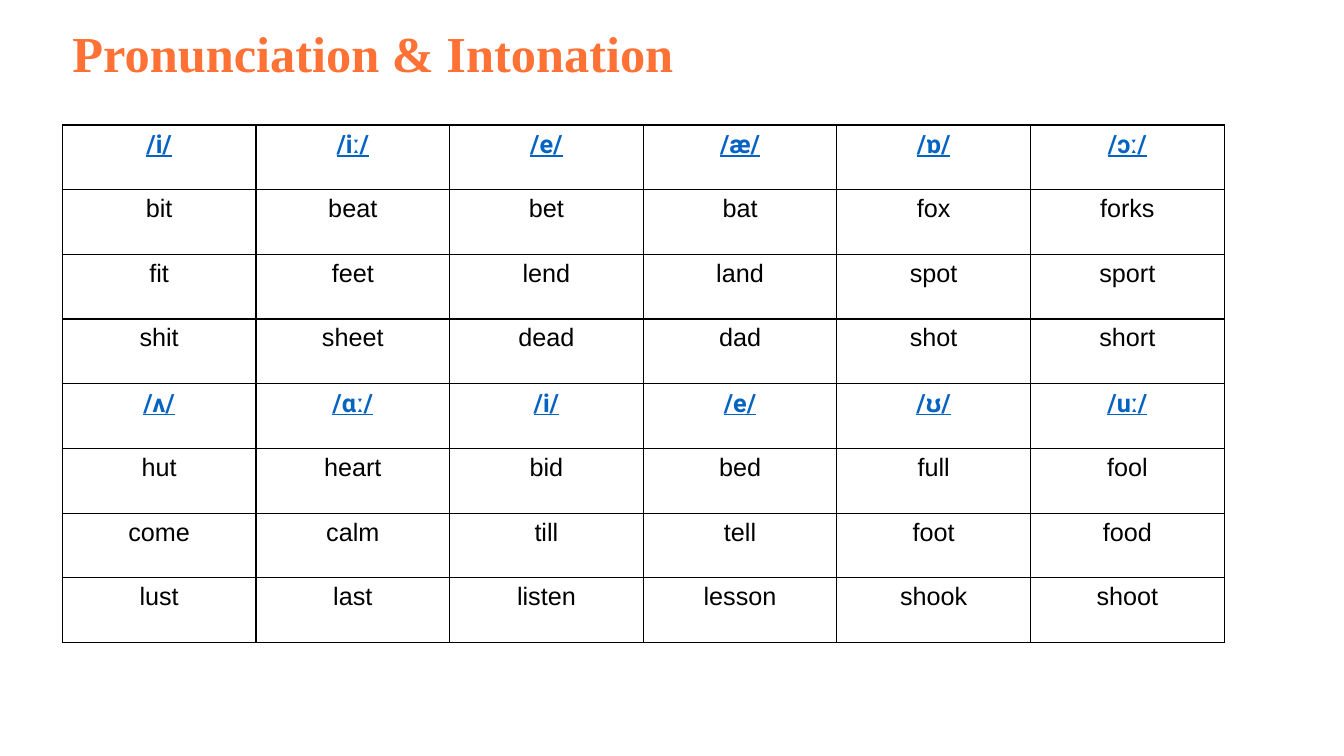
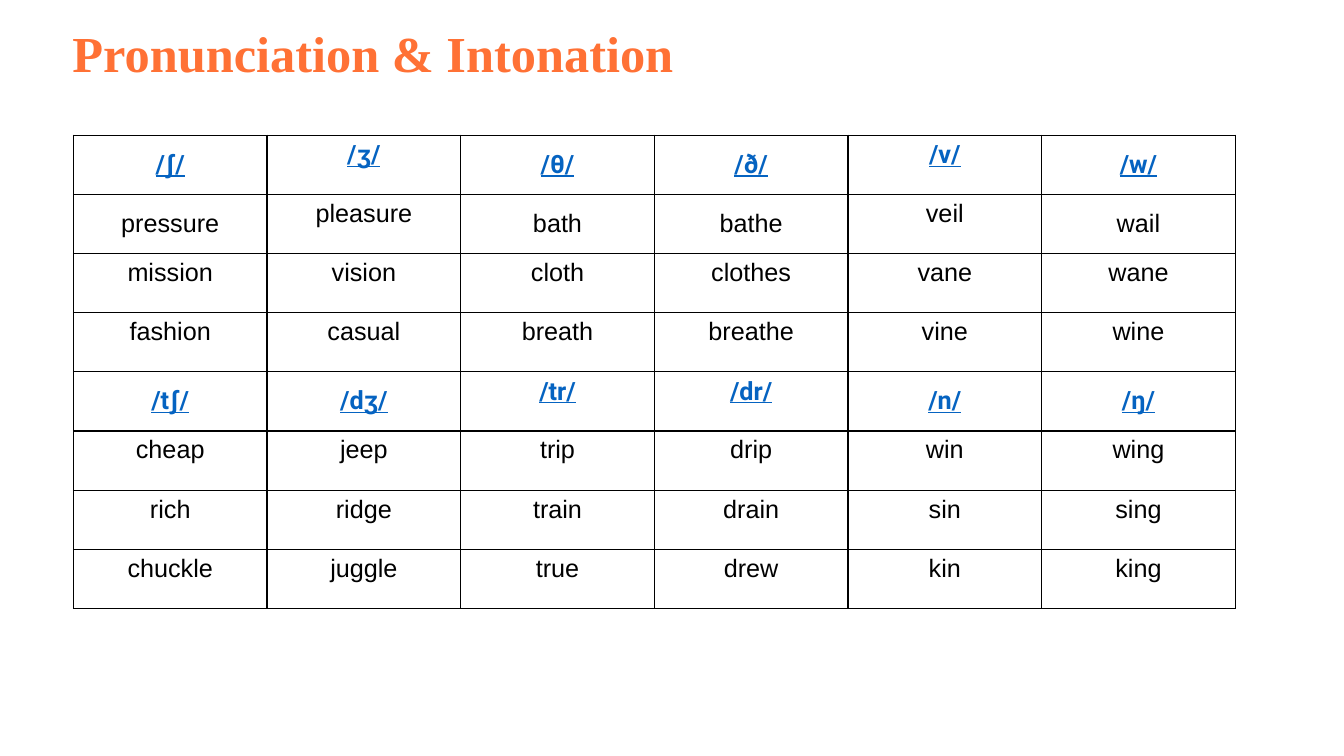
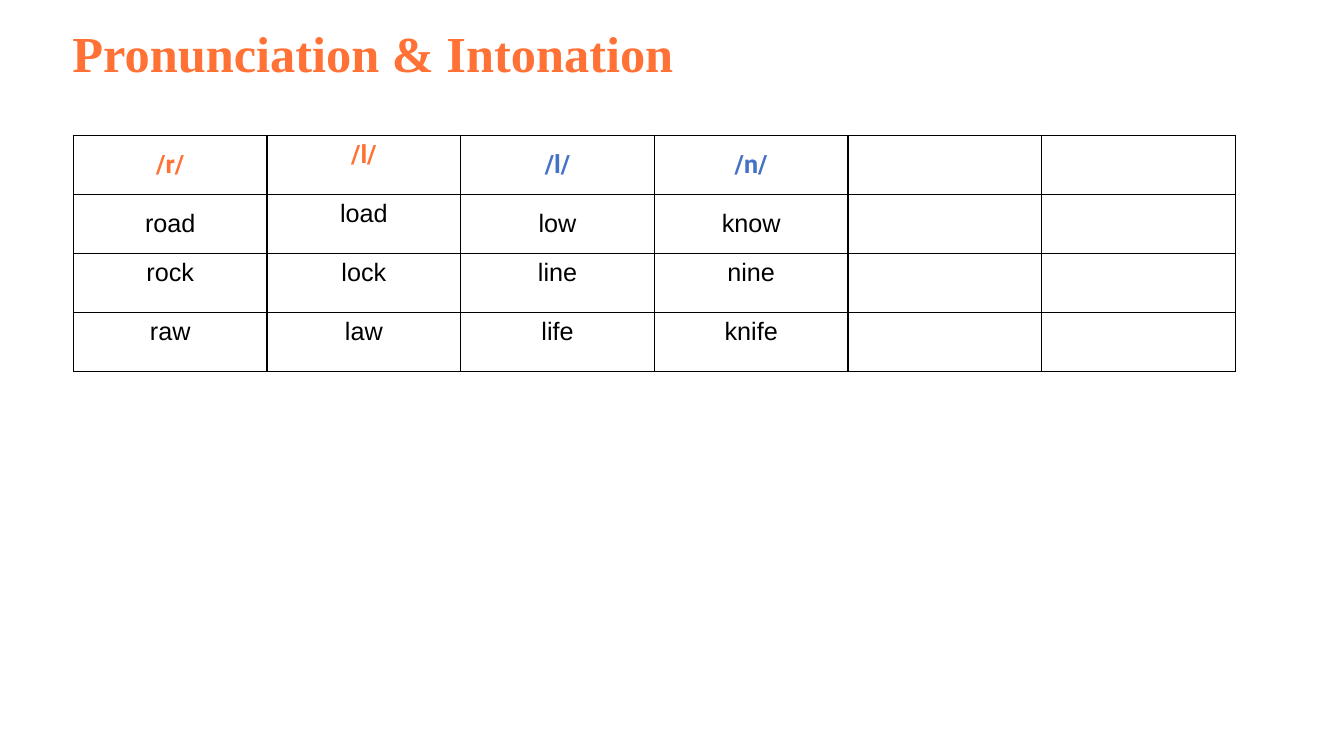
from lxml import etree
from pptx import Presentation
from pptx.dml.color import RGBColor
from pptx.enum.text import MSO_ANCHOR, MSO_AUTO_SIZE, PP_ALIGN
from pptx.oxml.ns import qn
from pptx.util import Cm, Pt

CENTER, JUSTIFY = PP_ALIGN.CENTER, PP_ALIGN.JUSTIFY
MIDDLE = MSO_ANCHOR.MIDDLE
NO_AUTOFIT = MSO_AUTO_SIZE.NONE

COLORS = {
    "accent": "FF7135",
    "link": "0563C1",
    "contrast": "4472C4",
    "text": "000000",
    "border": "000000",
}
TITLE_FONT, SOUND_FONT, WORD_FONT = "Times New Roman", "Roboto", "Arial"
TITLE_ONLY = 5
COLUMN_COUNT = 6
COLUMN_WIDTH = 4.88
TIGHT_MARGIN = 0.08

VOWELS = [
    "/i/ /iː/ /e/ /æ/ /ɒ/ /ɔː/",
    "bit beat bet bat fox forks",
    "fit feet lend land spot sport",
    "shit sheet dead dad shot short",
    "/ʌ/ /ɑː/ /i/ /e/ /ʊ/ /uː/",
    "hut heart bid bed full fool",
    "come calm till tell foot food",
    "lust last listen lesson shook shoot",
]
CONSONANTS = [
    "/ʃ/ /ʒ/ /θ/ /ð/ /v/ /w/",
    "pressure pleasure bath bathe veil wail",
    "mission vision cloth clothes vane wane",
    "fashion casual breath breathe vine wine",
    "/tʃ/ /dʒ/ /tr/ /dr/ /n/ /ŋ/",
    "cheap jeep trip drip win wing",
    "rich ridge train drain sin sing",
    "chuckle juggle true drew kin king",
]
LIQUIDS_AND_NASALS = [
    "/r/ /l/ /l/ /n/",
    "road load low know",
    "rock lock line nine",
    "raw law life knife",
]


class Lesson:
    def __init__(self):
        self.deck = Presentation()
        self.deck.slide_width, self.deck.slide_height = Cm(33.87), Cm(19.05)
        self.slide = None

    def add_slide(self, title):
        layout = self.deck.slide_layouts[TITLE_ONLY]
        self.slide = self.deck.slides.add_slide(layout)
        heading = self.slide.shapes.title
        heading.left, heading.top = Cm(1.57), Cm(0.48)
        heading.width, heading.height = Cm(23.85), Cm(1.88)
        frame = heading.text_frame
        frame.auto_size = NO_AUTOFIT
        frame.vertical_anchor = MIDDLE
        paragraph = frame.paragraphs[0]
        paragraph.alignment = JUSTIFY
        paragraph.line_spacing = 0.9
        self.add_run(paragraph, title, TITLE_FONT, 36, "accent", bold=True)

    def add_run(self, paragraph, text, font, size, color, bold=False, underline=False):
        run = paragraph.add_run()
        run.text = text
        run.font.name, run.font.size = font, Pt(size)
        run.font.bold, run.font.underline = bold, underline
        run.font.color.rgb = RGBColor.from_string(COLORS[color])

    def add_sound_table(self, left, top, row_height, rows, centered=None,
                        sound_colors=("link",) * COLUMN_COUNT, underline=True):
        """Draw sounds and sample words; centered maps a row to its mid-anchored columns."""
        centered = centered or {}
        table = self.slide.shapes.add_table(
            len(rows), COLUMN_COUNT, Cm(left), Cm(top),
            Cm(COLUMN_WIDTH * COLUMN_COUNT), Cm(row_height * len(rows))).table
        table.first_row = table.horz_banding = False
        for column in table.columns:
            column.width = Cm(COLUMN_WIDTH)
        for row_index, line in enumerate(rows):
            table.rows[row_index].height = Cm(row_height)
            for column_index in range(COLUMN_COUNT):
                self.style_cell(table.cell(row_index, column_index),
                                column_index in centered.get(row_index, ()))
            for column_index, entry in enumerate(line.split()):
                paragraph = table.cell(row_index, column_index).text_frame.paragraphs[0]
                paragraph.alignment = CENTER
                if entry.startswith("/"):
                    self.add_run(paragraph, entry, SOUND_FONT, 18,
                                 sound_colors[column_index], True, underline)
                else:
                    self.add_run(paragraph, entry, WORD_FONT, 18, "text")

    def style_cell(self, cell, is_centered):
        if is_centered:
            cell.vertical_anchor = MIDDLE
            cell.margin_left = cell.margin_right = Cm(TIGHT_MARGIN)
            cell.margin_top = cell.margin_bottom = Cm(TIGHT_MARGIN)
        properties = cell._tc.get_or_add_tcPr()
        for side in ("lnL", "lnR", "lnT", "lnB"):
            border = etree.SubElement(properties, qn(f"a:{side}"), w=str(Pt(1)))
            fill = etree.SubElement(border, qn("a:solidFill"))
            etree.SubElement(fill, qn("a:srgbClr"), val=COLORS["border"])
        cell.fill.background()


def main():
    lesson = Lesson()
    title = "Pronunciation & Intonation"

    lesson.add_slide(title)
    lesson.add_sound_table(1.57, 3.15, 1.63, VOWELS)

    lesson.add_slide(title)
    lesson.add_sound_table(
        1.85, 3.41, 1.49, CONSONANTS,
        centered={0: (0, 2, 3, 5), 1: (0, 2, 3, 5), 4: (0, 1, 4, 5)})

    lesson.add_slide(title)
    lesson.add_sound_table(
        1.85, 3.41, 1.49, LIQUIDS_AND_NASALS,
        centered={0: (0, 2, 3), 1: (0, 2, 3)},
        sound_colors=("accent", "accent", "contrast", "contrast"), underline=False)

    lesson.deck.save("out.pptx")


if __name__ == "__main__":
    main()
